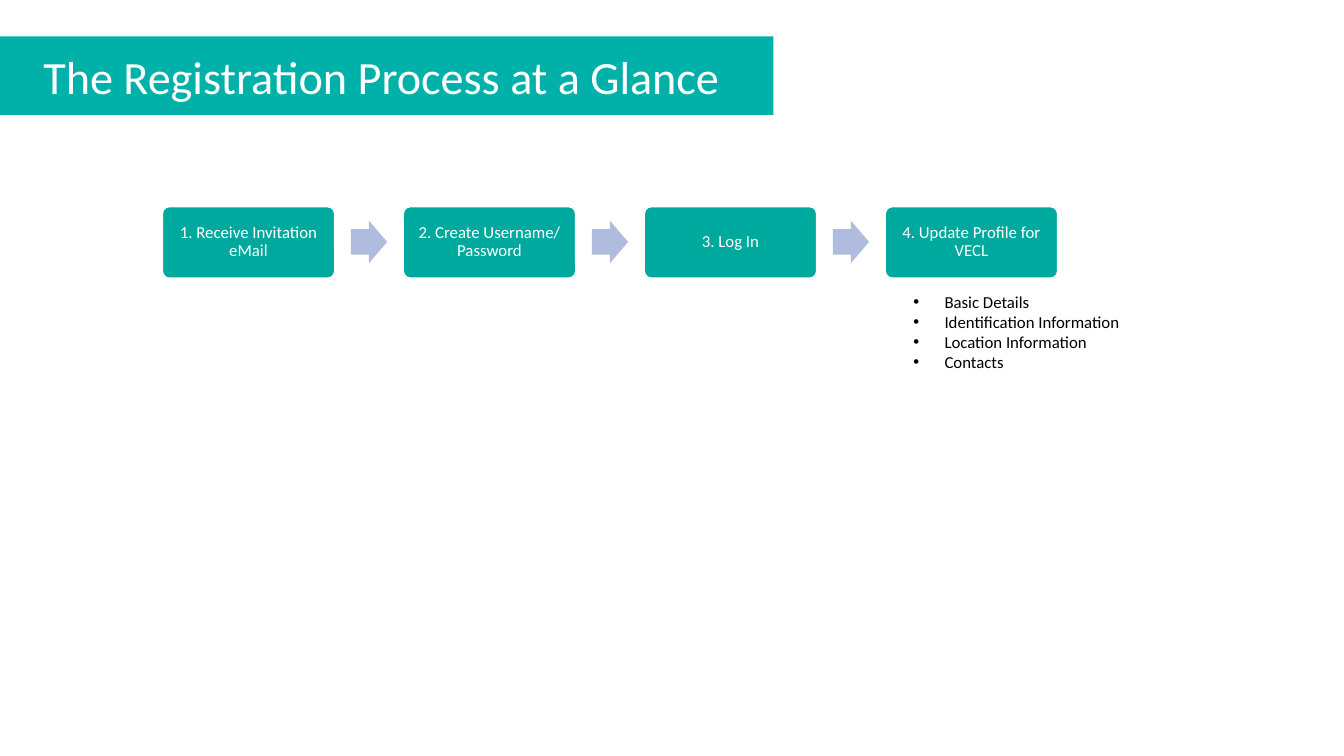
import dataclasses

import lxml.etree
import pptx
import pptx.dml.color
import pptx.enum.shapes
import pptx.enum.text
import pptx.oxml.ns
import pptx.util

Inches = pptx.util.Inches
Pt = pptx.util.Pt
Shape = pptx.enum.shapes.MSO_SHAPE
Align = pptx.enum.text.PP_ALIGN
Anchor = pptx.enum.text.MSO_ANCHOR


@dataclasses.dataclass(frozen=True)
class Theme:
    font: str = "Calibri"
    banner: str = "00B1A9"
    step: str = "00A99D"
    arrow: str = "B0BCDE"
    light: str = "FFFFFF"
    dark: str = "000000"
    title_size: float = 33
    body_size: float = 12


@dataclasses.dataclass(frozen=True)
class Box:
    left: float
    top: float
    width: float
    height: float

    def shifted(self, distance: float) -> "Box":
        return dataclasses.replace(self, left=self.left + distance)

    def lengths(self) -> list:
        return [Inches(n) for n in (self.left, self.top, self.width, self.height)]


THEME = Theme()
BANNER = Box(0, 0.36, 7.67, 0.78)
FIRST_STEP = Box(1.61, 2.05, 1.71, 0.71)
FIRST_ARROW = Box(3.48, 2.19, 0.36, 0.42)
PROFILE_LIST = Box(8.96, 2.84, 3.74, 0.91)
STEP_PITCH = 2.39

STEPS = (
    "1. Receive Invitation eMail",
    "2. Create Username/ Password",
    "3. Log In",
    "4. Update Profile for VECL",
)
PROFILE_SECTIONS = (
    "Basic Details",
    "Identification Information",
    "Location Information",
    "Contacts",
)


def rgb(value: str) -> pptx.dml.color.RGBColor:
    return pptx.dml.color.RGBColor.from_string(value)


def style_font(paragraph, size: float, color: str) -> None:
    paragraph.font.name = THEME.font
    paragraph.font.size = Pt(size)
    paragraph.font.color.rgb = rgb(color)


def add_filled(slide, kind, box: Box, fill: str):
    shape = slide.shapes.add_shape(kind, *box.lengths())
    shape.shadow.inherit = False
    shape.fill.solid()
    shape.fill.fore_color.rgb = rgb(fill)
    shape.line.fill.background()
    return shape


def set_insets(frame, left: float, others: float) -> None:
    frame.margin_left = Inches(left)
    frame.margin_top = frame.margin_right = frame.margin_bottom = Inches(others)


def add_banner(slide, title: str) -> None:
    banner = add_filled(slide, Shape.RECTANGLE, BANNER, THEME.banner)
    frame = banner.text_frame
    set_insets(frame, 0.43, 0)
    frame.vertical_anchor = Anchor.MIDDLE
    frame.text = title
    heading = frame.paragraphs[0]
    heading.alignment = Align.LEFT
    style_font(heading, THEME.title_size, THEME.light)


def add_step(slide, box: Box, label: str) -> None:
    step = add_filled(slide, Shape.ROUNDED_RECTANGLE, box, THEME.step)
    step.adjustments[0] = 0.1
    step.line.color.rgb = rgb(THEME.light)
    step.line.width = Pt(1)
    frame = step.text_frame
    set_insets(frame, 0.05, 0.05)
    frame.word_wrap = True
    frame.vertical_anchor = Anchor.MIDDLE
    frame.text = label
    caption = frame.paragraphs[0]
    caption.alignment = Align.CENTER
    caption.line_spacing = 0.9
    style_font(caption, THEME.body_size, THEME.light)


def add_arrow(slide, box: Box) -> None:
    arrow = add_filled(slide, Shape.RIGHT_ARROW, box, THEME.arrow)
    arrow.adjustments[0] = 0.6
    arrow.adjustments[1] = 0.5


def add_bullet(paragraph) -> None:
    properties = paragraph._p.get_or_add_pPr()
    indent = Inches(0.31)
    properties.set("marL", str(indent))
    properties.set("indent", str(-indent))
    font = lxml.etree.SubElement(properties, pptx.oxml.ns.qn("a:buFont"))
    font.set("typeface", "Arial")
    bullet = lxml.etree.SubElement(properties, pptx.oxml.ns.qn("a:buChar"))
    bullet.set("char", "•")


def add_profile_list(slide) -> None:
    frame = slide.shapes.add_textbox(*PROFILE_LIST.lengths()).text_frame
    frame.word_wrap = True
    frame.auto_size = pptx.enum.text.MSO_AUTO_SIZE.SHAPE_TO_FIT_TEXT
    frame.text = "\n".join(PROFILE_SECTIONS)
    for section in frame.paragraphs:
        style_font(section, THEME.body_size, THEME.dark)
        add_bullet(section)


def main() -> None:
    deck = pptx.Presentation()
    deck.slide_width = Inches(13.33)
    deck.slide_height = Inches(7.5)
    slide = deck.slides.add_slide(deck.slide_layouts[6])

    # Title banner
    add_banner(slide, "The Registration Process at a Glance")

    # Process steps, with an arrow between neighbours
    for index, label in enumerate(STEPS):
        offset = index * STEP_PITCH
        add_step(slide, FIRST_STEP.shifted(offset), label)
        if index < len(STEPS) - 1:
            add_arrow(slide, FIRST_ARROW.shifted(offset))

    # Profile sections under the last step
    add_profile_list(slide)

    deck.save("out.pptx")


if __name__ == "__main__":
    main()
